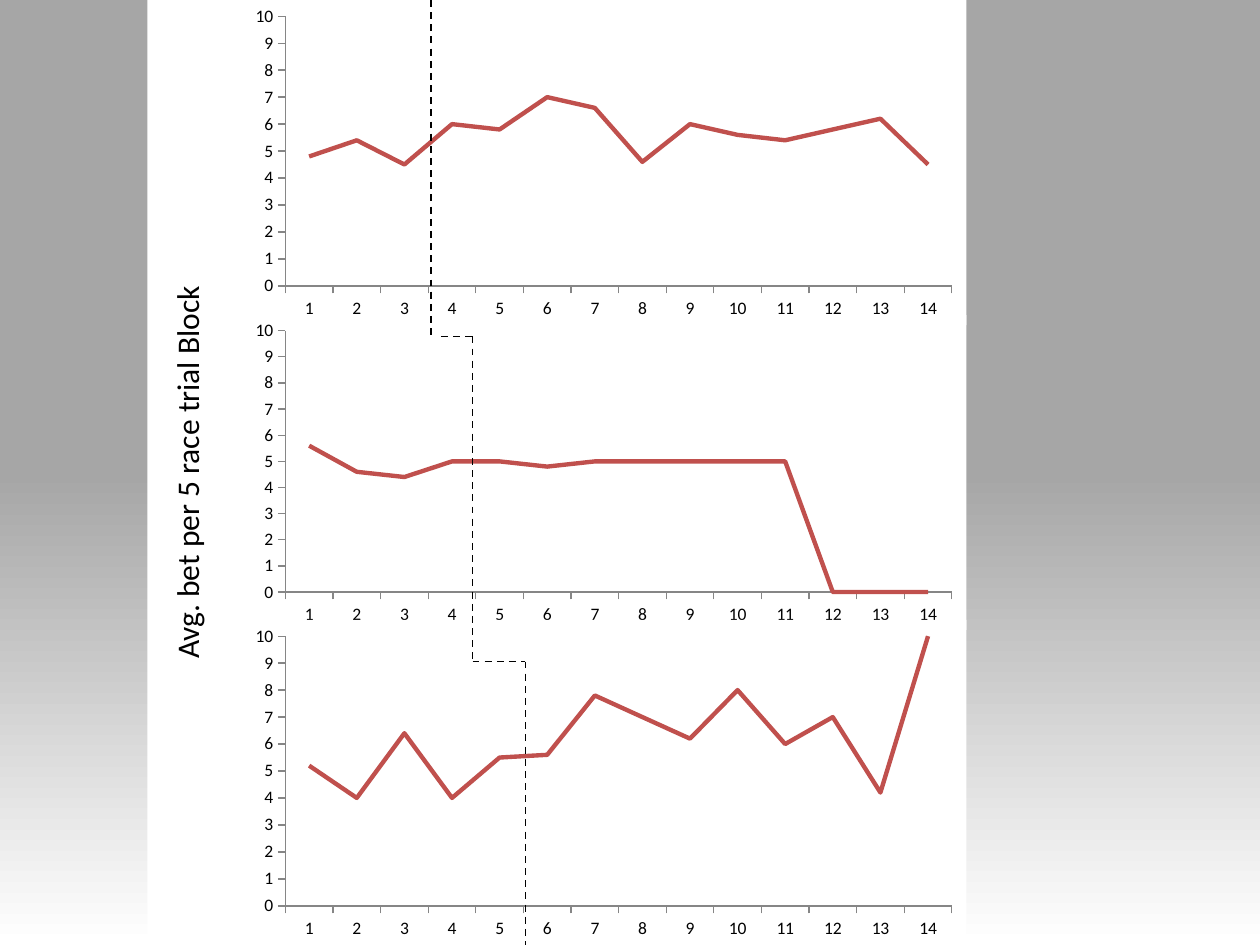
from lxml.etree import SubElement
from pptx import Presentation
from pptx.chart.data import CategoryChartData
from pptx.dml.color import RGBColor
from pptx.enum.chart import XL_CHART_TYPE, XL_TICK_MARK
from pptx.enum.dml import MSO_LINE
from pptx.enum.shapes import MSO_CONNECTOR, MSO_SHAPE
from pptx.enum.text import MSO_ANCHOR, PP_ALIGN
from pptx.oxml import parse_xml
from pptx.oxml.ns import nsdecls, qn
from pptx.util import Inches, Pt

FONT = "Calibri"
BLACK, WHITE, GRAY, AXIS_GRAY, RED = "000000", "FFFFFF", "A6A6A6", "868686", "C0504D"
CHART_LEFT, CHART_WIDTH = 1.92, 5.75
PANELS = [
    (0, 2.58, [4.8, 5.4, 4.5, 6, 5.8, 7, 6.6, 4.6, 6, 5.6, 5.4, 5.8, 6.2, 4.5]),
    (2.5, 2.5, [5.6, 4.6, 4.4, 5, 5, 4.8, 5, 5, 5, 5, 5, None, None, None]),
    (4.92, 2.58, [5.2, 4, 6.4, 4, 5.5, 5.6, 7.8, 7, 6.2, 8, 6, 7, 4.2, 10]),
]
PHASE_LINES = [
    (3.42, 0, 3.42, 2.67),
    (3.75, 2.67, 3.75, 5.25),
    (4.17, 5.25, 4.17, 7.5),
    (3.5, 2.67, 3.75, 2.67),
    (3.75, 5.25, 4.17, 5.25),
]


def color(value):
    """Turn a hex string into a colour."""
    return RGBColor.from_string(value)


def paint_background(slide):
    """Fade the slide from white at the bottom to gray at mid-height."""
    fill = slide.background.fill
    fill.gradient()
    fill.gradient_angle = 90
    for stop, position, shade in zip(fill.gradient_stops, (0, 0.5), (WHITE, GRAY)):
        stop.position = position
        stop.color.rgb = color(shade)


def place_plot(chart):
    """Fix the inner plot area as shares of the chart's size."""
    plot_area = chart.plots[0]._element.getparent()
    layout = plot_area.find(qn("c:layout"))
    if layout is None:
        layout = plot_area.makeelement(qn("c:layout"))
        plot_area.insert(0, layout)
    manual = SubElement(layout, qn("c:manualLayout"))
    settings = [("layoutTarget", "inner"), ("xMode", "edge"), ("yMode", "edge"),
                ("x", "0.06"), ("y", "0.05"), ("w", "0.92"), ("h", "0.83")]
    for name, value in settings:
        SubElement(manual, qn(f"c:{name}")).set("val", value)


def fill_chart(chart, shade):
    """Fill the chart area and draw missing values as zero."""
    chart_part = chart._chartSpace.find(qn("c:chart"))
    chart_part.addnext(parse_xml(
        f'<c:spPr {nsdecls("c", "a")}><a:solidFill><a:srgbClr val="{shade}"/>'
        "</a:solidFill><a:ln><a:noFill/></a:ln></c:spPr>"))
    chart_part.find(qn("c:dispBlanksAs")).set("val", "zero")


def add_panel(slide, top, height, values):
    """Add one line chart of average bets."""
    data = CategoryChartData()
    data.categories = [str(block) for block in range(1, len(values) + 1)]
    data.add_series("Series 1", values)
    chart = slide.shapes.add_chart(
        XL_CHART_TYPE.LINE, Inches(CHART_LEFT), Inches(top),
        Inches(CHART_WIDTH), Inches(height), data).chart
    chart.has_legend = False
    chart.has_title = False
    chart.font.name = FONT
    chart.font.size = Pt(10)
    chart.font.color.rgb = color(BLACK)
    for axis in (chart.category_axis, chart.value_axis):
        axis.has_major_gridlines = False
        axis.major_tick_mark = XL_TICK_MARK.OUTSIDE
        axis.minor_tick_mark = XL_TICK_MARK.NONE
        axis.format.line.color.rgb = color(AXIS_GRAY)
        axis.format.line.width = Pt(0.75)
    chart.value_axis.minimum_scale = 0
    chart.value_axis.maximum_scale = 10
    chart.value_axis.major_unit = 1
    chart.plots[0].vary_by_categories = False
    series = chart.plots[0].series[0]
    series.smooth = False
    series.format.line.color.rgb = color(RED)
    series.format.line.width = Pt(2.5)
    place_plot(chart)
    fill_chart(chart, WHITE)


def add_axis_label(slide, text, height):
    """Add the white strip with the upward-reading axis label."""
    box = slide.shapes.add_shape(
        MSO_SHAPE.RECTANGLE, Inches(1.17), 0, Inches(0.81), height)
    box.shadow.inherit = False
    box.fill.solid()
    box.fill.fore_color.rgb = color(WHITE)
    box.line.fill.background()
    frame = box.text_frame
    frame.text = text
    frame.word_wrap = True
    frame.vertical_anchor = MSO_ANCHOR.TOP
    frame.margin_left = Inches(0.16)
    frame._txBody.bodyPr.set("vert", "vert270")
    para = frame.paragraphs[0]
    para.alignment = PP_ALIGN.CENTER
    font = para.runs[0].font
    font.name = FONT
    font.size = Pt(18)
    font.color.rgb = color(BLACK)


def add_phase_line(slide, *ends):
    """Add one dashed line of the phase-change boundary."""
    connector = slide.shapes.add_connector(
        MSO_CONNECTOR.STRAIGHT, *(Inches(end) for end in ends))
    connector.line.color.rgb = color(BLACK)
    connector.line.width = Pt(1)
    connector.line.dash_style = MSO_LINE.DASH
    SubElement(connector._element.spPr, qn("a:effectLst"))


def main():
    """Build the slide and save the deck."""
    deck = Presentation()
    deck.slide_width, deck.slide_height = Inches(10), Inches(7.5)
    slide = deck.slides.add_slide(deck.slide_layouts[6])
    paint_background(slide)
    for panel in PANELS:
        add_panel(slide, *panel)
    add_axis_label(slide, "Avg. bet per 5 race trial Block", deck.slide_height)
    for ends in PHASE_LINES:
        add_phase_line(slide, *ends)
    deck.save("out.pptx")


if __name__ == "__main__":
    main()
